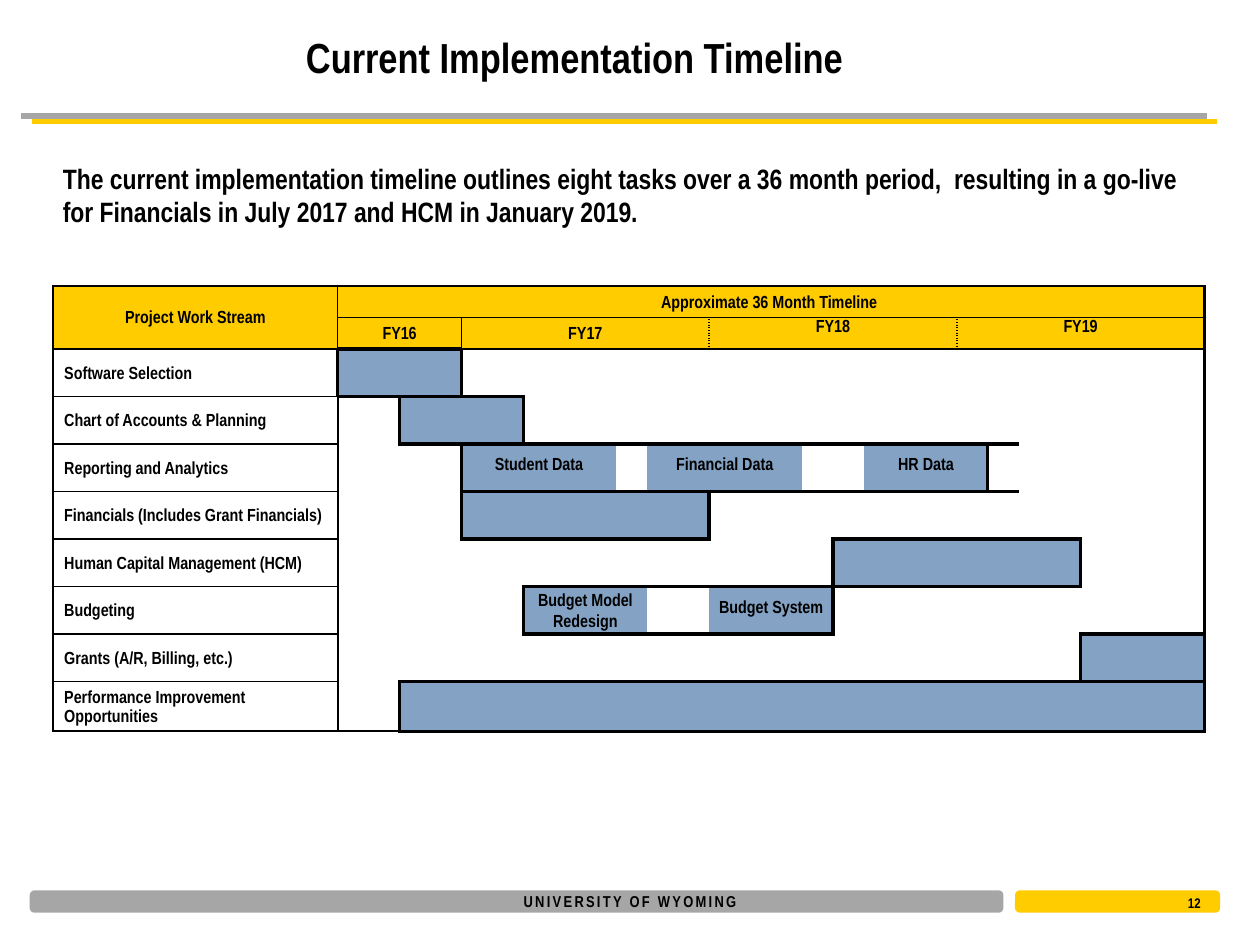
from dataclasses import dataclass
from lxml import etree
from pptx import Presentation
from pptx.dml.color import RGBColor
from pptx.enum import shapes, text
from pptx.oxml import ns
from pptx.util import Inches, Pt

@dataclass(frozen=True)
class Theme:
    font: str = "Arial Narrow"
    black: str = "000000"
    grey: str = "A6A6A6"
    gold: str = "FFCC00"
    blue: str = "84A3C4"
    title: float = 24
    body: float = 16
    table: float = 10
    footer: float = 9
    number: float = 8
    thin: float = 1
    frame: float = 1.5
    bar: float = 2.25

THEME = Theme()
CENTER, MIDDLE, TOP = text.PP_ALIGN.CENTER, text.MSO_ANCHOR.MIDDLE, text.MSO_ANCHOR.TOP

# Widths of the time columns in units; columns are counted from 1
UNITS = [2, 2, 2, 2, 1, 1, 2, 2] + [1] * 8 + [2, 2, 2]
LAST = len(UNITS)
STREAM_WIDTH, UNIT = 2.26, 6.88 / sum(UNITS)
HEADER_HEIGHT, ROW_HEIGHT = 0.25, 3.02 / 8
REPORTING_ROW, PERFORMANCE_ROW = 4, 9
PAIRS = [(5, 6), (9, 10), (11, 12), (13, 14), (15, 16)]

# Year, first and last column, anchor
YEARS = [("FY16", 1, 2, MIDDLE), ("FY17", 3, 7, MIDDLE),
         ("FY18", 8, 14, TOP), ("FY19", 15, 19, TOP)]
# Work stream and its bar parts: first and last column, label, label offset
STREAMS = [
    ("Software Selection", [(1, 2, "", 0)]),
    ("Chart of Accounts & Planning", [(2, 3, "", 0)]),
    ("Reporting and Analytics", [(3, 5, "Student Data", 0.02), (7, 9, "Financial Data", 0.02),
                                 (12, 15, "HR Data", 0.02)]),
    ("Financials (Includes Grant Financials)", [(3, 7, "", 0)]),
    ("Human Capital Management (HCM)", [(11, 17, "", 0)]),
    ("Budgeting", [(4, 6, "Budget Model Redesign", -0.03), (8, 10, "Budget System", 0.02)]),
    ("Grants (A/R, Billing, etc.)", [(18, 19, "", 0)]),
    ("Performance Improvement Opportunities", [(2, 19, "", 0)]),
]
ROWS = len(STREAMS) + 2

def color(value):
    return RGBColor.from_string(value)

def style(paragraph, size, align=None):
    paragraph.alignment = align
    paragraph.font.name, paragraph.font.size = THEME.font, Pt(size)
    paragraph.font.bold = True
    paragraph.font.color.rgb = color(THEME.black)

def add_text(slide, box, words, size, align=None, anchor=TOP):
    frame = slide.shapes.add_textbox(*map(Inches, box)).text_frame
    frame.word_wrap = True
    frame.vertical_anchor = anchor
    frame.text = words
    style(frame.paragraphs[0], size, align)
    return frame

def add_heading(slide, box):
    left, top, width, height = box
    add_text(slide, (left + 2.16, top, 7.5, 0.6), "Current Implementation Timeline",
             THEME.title, anchor=MIDDLE)
    # Grey rule with a hard gold shadow
    rule = slide.shapes.add_connector(
        shapes.MSO_CONNECTOR.STRAIGHT,
        *map(Inches, (left, top + height, left + width, top + height)))
    rule.line.color.rgb = color(THEME.grey)
    rule.line.width = Pt(3)
    effects = etree.SubElement(rule._element.spPr, ns.qn("a:effectLst"))
    shadow = etree.SubElement(effects, ns.qn("a:outerShdw"), dist=str(Pt(6.7)),
                              dir=str(27 * 60000), algn="ctr", rotWithShape="0")
    etree.SubElement(shadow, ns.qn("a:srgbClr"), val=THEME.gold)

def add_footer(slide, box):
    left, top, width, height = box
    for start, length, fill in ((left, 7.7, THEME.grey), (left + width - 1.6, 1.6, THEME.gold)):
        band = slide.shapes.add_shape(shapes.MSO_SHAPE.ROUNDED_RECTANGLE,
                                      *map(Inches, (start, top, length, height)))
        band.shadow.inherit = False
        band.fill.solid()
        band.fill.fore_color.rgb = band.line.color.rgb = color(fill)
        band.line.width = Pt(2)
    name = add_text(slide, (4.1, top - 0.05, 1.8, 0.25), "UNIVERSITY OF WYOMING",
                    THEME.footer, CENTER, MIDDLE)
    name.margin_left = name.margin_right = 0
    name.word_wrap = False
    name.paragraphs[0].runs[0].font._element.set("spc", "130")
    add_text(slide, (9.33, top - 0.03, 0.4, 0.2), "12", THEME.number)

def set_edges(edges, rows, columns, sides, width, dash="solid"):
    """Record the outer edges of a block of cells, on both cells that share each."""
    across = range(columns[0], columns[1] + 1)
    down = range(rows[0], rows[1] + 1)
    lines = {"L": [(row, columns[0], 0, -1, "R") for row in down],
             "R": [(row, columns[1], 0, 1, "L") for row in down],
             "T": [(rows[0], column, -1, 0, "B") for column in across],
             "B": [(rows[1], column, 1, 0, "T") for column in across]}
    for side in sides:
        for row, column, below, beside, other in lines[side]:
            edges[row, column, side] = (width, dash)
            edges[row + below, column + beside, other] = (width, dash)

def collect_edges(spans):
    edges = {}
    set_edges(edges, (0, 0), (1, LAST), "LB", THEME.thin)
    for year, first, last, anchor in YEARS:
        dash = "sysDot" if first > 3 else "solid"
        set_edges(edges, (1, 1), (first, last), "L", THEME.thin, dash)
        set_edges(edges, (1, 1), (first, last), "B", THEME.thin)
    for row in range(2, ROWS):
        set_edges(edges, (row, row), (0, 0), "TB", THEME.thin)
        set_edges(edges, (row, row), (0, 0), "R", THEME.frame)
    set_edges(edges, (0, ROWS - 1), (0, LAST), "LTRB", THEME.frame)
    # The lines of the reporting bar run one column past its end
    set_edges(edges, (REPORTING_ROW, REPORTING_ROW), (16, 16), "TB", THEME.bar)
    for row, (name, parts) in enumerate(STREAMS, 2):
        set_edges(edges, (row, row), (parts[0][0], parts[-1][1]), "LTRB", THEME.bar)
    # A merged cell takes its right edge from its first cell
    for row, first, last in spans:
        edges[row, first, "R"] = edges.get((row, last, "R"), (0, None))
    return edges

def format_cell(cell, position, edges, fill):
    cell.margin_left = cell.margin_right = cell.margin_top = cell.margin_bottom = 0
    for side in "LRTB":
        width, dash = edges.get((*position, side), (0, None))
        line = etree.SubElement(cell._tc.get_or_add_tcPr(), ns.qn(f"a:ln{side}"),
                                w=str(Pt(width)))
        paint = etree.SubElement(line, ns.qn("a:solidFill" if width else "a:noFill"))
        if width:
            etree.SubElement(paint, ns.qn("a:srgbClr"), val=THEME.black)
            etree.SubElement(line, ns.qn("a:prstDash"), val=dash)
    if fill:
        cell.fill.solid()
        cell.fill.fore_color.rgb = color(fill)
    else:
        cell.fill.background()
    style(cell.text_frame.paragraphs[0], THEME.table)

def write_cell(cell, words, align=None, anchor=MIDDLE, indent=0.01):
    cell.text = words
    cell.vertical_anchor = anchor
    if anchor == MIDDLE:
        cell.margin_left = Inches(indent)
        cell.margin_right = cell.margin_top = Inches(0.01)
    cell.text_frame.paragraphs[0].line_spacing = 1.15
    style(cell.text_frame.paragraphs[0], THEME.table, align)

def add_timeline(slide, box):
    left, top, width, height = box
    table = slide.shapes.add_table(ROWS, LAST + 1, *map(Inches, box)).table
    table.first_row = table.horz_banding = False
    for column, length in enumerate([STREAM_WIDTH] + [units * UNIT for units in UNITS]):
        table.columns[column].width = Inches(length)
    spans = [(0, 1, LAST), (PERFORMANCE_ROW, 2, 3)]
    spans += [(1, first, last) for year, first, last, anchor in YEARS]
    spans += [(row, *pair) for row in range(2, ROWS) if row != REPORTING_ROW for pair in PAIRS]

    # Fills, borders and merged cells
    edges = collect_edges(spans)
    filled = {(row, column) for row, (name, parts) in enumerate(STREAMS, 2)
              for first, last, *label in parts for column in range(first, last + 1)}
    for row in range(ROWS):
        table.rows[row].height = Inches(HEADER_HEIGHT if row < 2 else ROW_HEIGHT)
        for column in range(LAST + 1):
            fill = THEME.gold if row < 2 else THEME.blue if (row, column) in filled else None
            format_cell(table.cell(row, column), (row, column), edges, fill)
    table.cell(0, 0).merge(table.cell(1, 0))
    for row, first, last in spans:
        table.cell(row, first).merge(table.cell(row, last))

    # Headings, work streams and bar labels
    write_cell(table.cell(0, 0), "Project Work Stream", CENTER)
    write_cell(table.cell(0, 1), "Approximate 36 Month Timeline ", CENTER)
    for year, first, last, anchor in YEARS:
        write_cell(table.cell(1, first), year, CENTER, anchor)
    for row, (name, parts) in enumerate(STREAMS, 2):
        write_cell(table.cell(row, 0), name, indent=0.09)
        row_top = top + 2 * HEADER_HEIGHT + (row - 2) * ROW_HEIGHT
        for first, last, label, offset in parts:
            middle = (sum(UNITS[:first - 1]) + sum(UNITS[:last])) / 2 * UNIT
            if label:
                add_text(slide, (left + STREAM_WIDTH + middle - 0.56, row_top + offset, 1.12, 0.27),
                         label, THEME.table, CENTER)

def main():
    presentation = Presentation()
    presentation.slide_width, presentation.slide_height = Inches(10), Inches(7.5)
    slide = presentation.slides.add_slide(presentation.slide_layouts[6])
    add_heading(slide, (0.17, 0.15, 9.41, 0.77))
    add_footer(slide, (0.25, 7.08, 9.42, 0.15))
    summary = ("The current implementation timeline outlines eight tasks over a 36 month period,  "
               "resulting in a go-live for Financials in July 2017 and HCM in January 2019.")
    frame = add_text(slide, (0.4, 1.23, 9.18, 0.64), summary, THEME.body)
    frame.paragraphs[0].space_after = Pt(12)
    add_timeline(slide, (0.42, 2.27, 9.14, 3.52))
    presentation.save("out.pptx")

if __name__ == "__main__":
    main()
